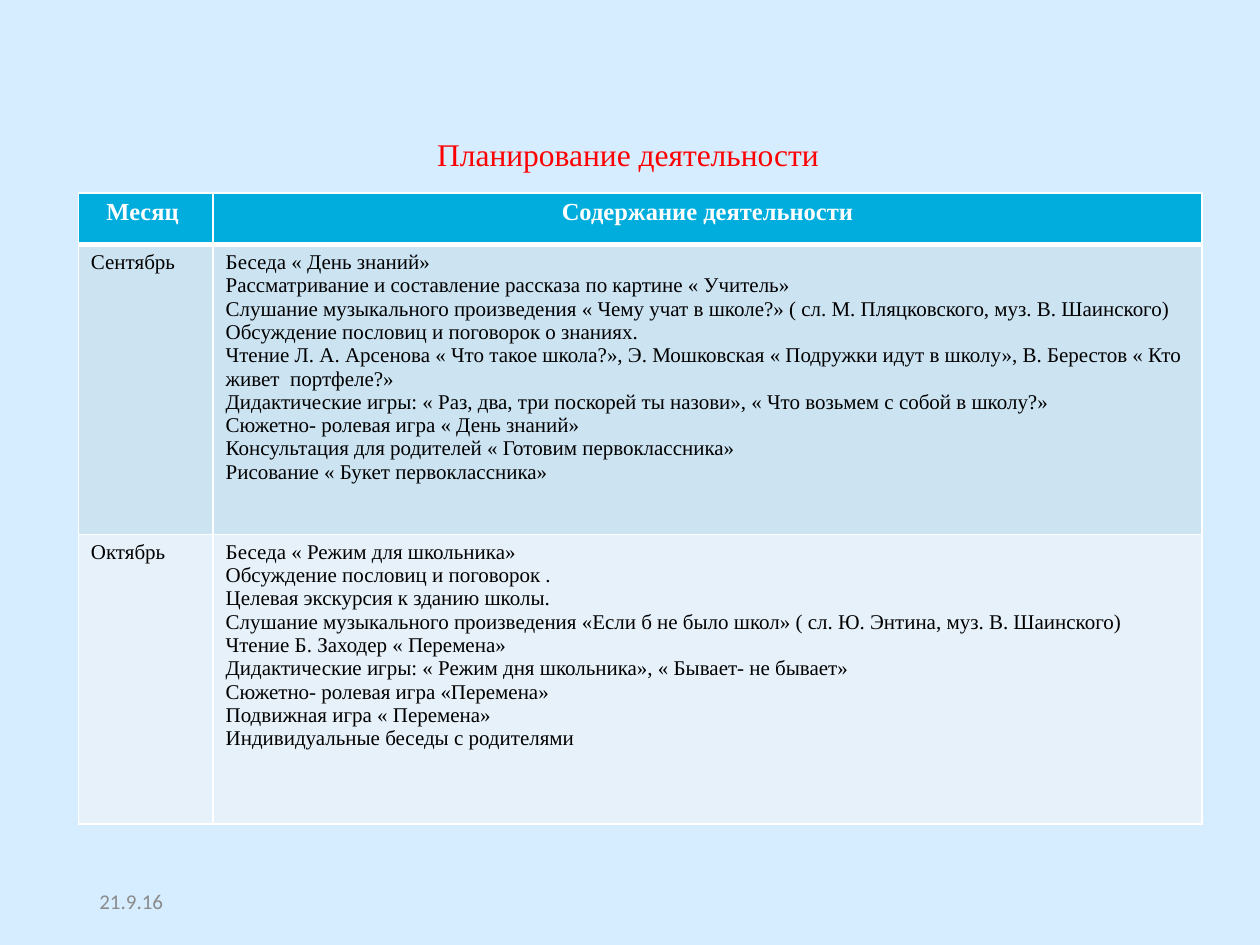
from dataclasses import dataclass

import pptx
import pptx.dml.color
import pptx.enum.text
import pptx.oxml
import pptx.oxml.ns
import pptx.util

Pt = pptx.util.Pt
Align = pptx.enum.text.PP_ALIGN
Anchor = pptx.enum.text.MSO_ANCHOR

COLORS = {
    "back": "D6ECFF",
    "title": "FF0000",
    "head": "00ADDC",
    "odd": "CCE3F2",
    "even": "E7F1F9",
    "white": "FFFFFF",
    "black": "000000",
    "date": "8B8B8B",
}
SERIF = "Times New Roman"
COLS = (77, 565.2)
ROWS = (29.5, 165.6, 165.6)


@dataclass
class Style:
    size: float
    color: str
    font: str = SERIF
    bold: bool = False
    align: Align = Align.LEFT


@dataclass
class Row:
    month: str
    lines: list[str]
    fill: str
    style: Style
    base: float = 1


HEAD = Style(14, "white", bold=True, align=Align.CENTER)
BODY = Style(12, "black")
PLAN = [
    Row("Месяц ", ["Содержание деятельности"], "head", HEAD, base=3),
    Row("Сентябрь", [
        "Беседа « День знаний»",
        "Рассматривание и составление рассказа по картине « Учитель»",
        "Слушание музыкального произведения « Чему учат в школе?» "
        "( сл. М. Пляцковского, муз. В. Шаинского)",
        "Обсуждение пословиц и поговорок о знаниях.",
        "Чтение Л. А. Арсенова « Что такое школа?», Э. Мошковская « Подружки "
        "идут в школу», В. Берестов « Кто живет  портфеле?»",
        "Дидактические игры: « Раз, два, три поскорей ты назови», "
        "« Что возьмем с собой в школу?»",
        "Сюжетно- ролевая игра « День знаний»",
        "Консультация для родителей « Готовим первоклассника»",
        "Рисование « Букет первоклассника»",
    ], "odd", BODY),
    Row("Октябрь", [
        "Беседа « Режим для школьника»",
        "Обсуждение пословиц и поговорок .",
        "Целевая экскурсия к зданию школы.",
        "Слушание музыкального произведения «Если б не было школ» "
        "( сл. Ю. Энтина, муз. В. Шаинского)",
        "Чтение Б. Заходер « Перемена»",
        "Дидактические игры: « Режим дня школьника», « Бывает- не бывает»",
        "Сюжетно- ролевая игра «Перемена»",
        "Подвижная игра « Перемена»",
        "Индивидуальные беседы с родителями",
    ], "even", BODY),
]


def paint(fill, name: str) -> None:
    fill.solid()
    fill.fore_color.rgb = pptx.dml.color.RGBColor.from_string(COLORS[name])


def write(frame, lines: list[str], style: Style) -> None:
    for i, line in enumerate(lines):
        para = frame.add_paragraph() if i else frame.paragraphs[0]
        para.alignment = style.align
        para.line_spacing = 1.0
        para.space_before = Pt(0)
        run = para.add_run()
        run.text = line
        run.font.name = style.font
        run.font.size = Pt(style.size)
        run.font.bold = style.bold
        paint(run.font.fill, style.color)


def edge(cell, base: float) -> None:
    """Draw white borders, with the given width at the bottom."""
    props = cell._tc.get_or_add_tcPr()
    space = pptx.oxml.ns.nsdecls("a")
    sides = {"lnL": 1, "lnR": 1, "lnT": 1, "lnB": base}
    for i, (side, width) in enumerate(sides.items()):
        props.insert(i, pptx.oxml.parse_xml(
            f'<a:{side} {space} w="{Pt(width)}"><a:solidFill>'
            f'<a:srgbClr val="{COLORS["white"]}"/></a:solidFill></a:{side}>'))


def add_title(slide) -> None:
    title = slide.shapes.title
    title.left, title.top, title.width, title.height = map(
        Pt, (242.6, 73.4, 234.8, 27.4))
    frame = title.text_frame
    frame.word_wrap = False
    frame.auto_size = pptx.enum.text.MSO_AUTO_SIZE.NONE
    frame.vertical_anchor = Anchor.TOP
    write(frame, ["Планирование деятельности"], Style(18, "title"))


def add_plan(slide) -> None:
    table = slide.shapes.add_table(
        len(ROWS), len(COLS), Pt(44.8), Pt(110.2),
        Pt(sum(COLS)), Pt(sum(ROWS))).table
    for col, width in zip(table.columns, COLS):
        col.width = Pt(width)
    above = 1
    for line, high, row in zip(table.rows, ROWS, PLAN):
        line.height = Pt(high)
        for cell, text in zip(line.cells, ([row.month], row.lines)):
            cell.margin_left = cell.margin_right = Pt(7.2)
            cell.margin_top = cell.margin_bottom = Pt(3.6)
            cell.vertical_anchor = Anchor.TOP
            write(cell.text_frame, text, row.style)
            paint(cell.fill, row.fill)
            edge(cell, row.base)
            cell._tc.tcPr.find(pptx.oxml.ns.qn("a:lnT")).set(
                "w", str(Pt(above)))
        above = row.base


def add_date(slide) -> None:
    box = slide.shapes.add_textbox(Pt(49.7), Pt(500.4), Pt(162), Pt(28.8))
    frame = box.text_frame
    frame.word_wrap = True
    frame.vertical_anchor = Anchor.MIDDLE
    write(frame, ["21.9.16"], Style(12, "date", "Calibri"))


def main() -> None:
    deck = pptx.Presentation()
    deck.slide_width, deck.slide_height = Pt(720), Pt(540)
    slide = deck.slides.add_slide(deck.slide_layouts.get_by_name("Title Only"))
    paint(slide.background.fill, "back")
    add_date(slide)
    add_title(slide)
    add_plan(slide)
    deck.save("out.pptx")


if __name__ == "__main__":
    main()
